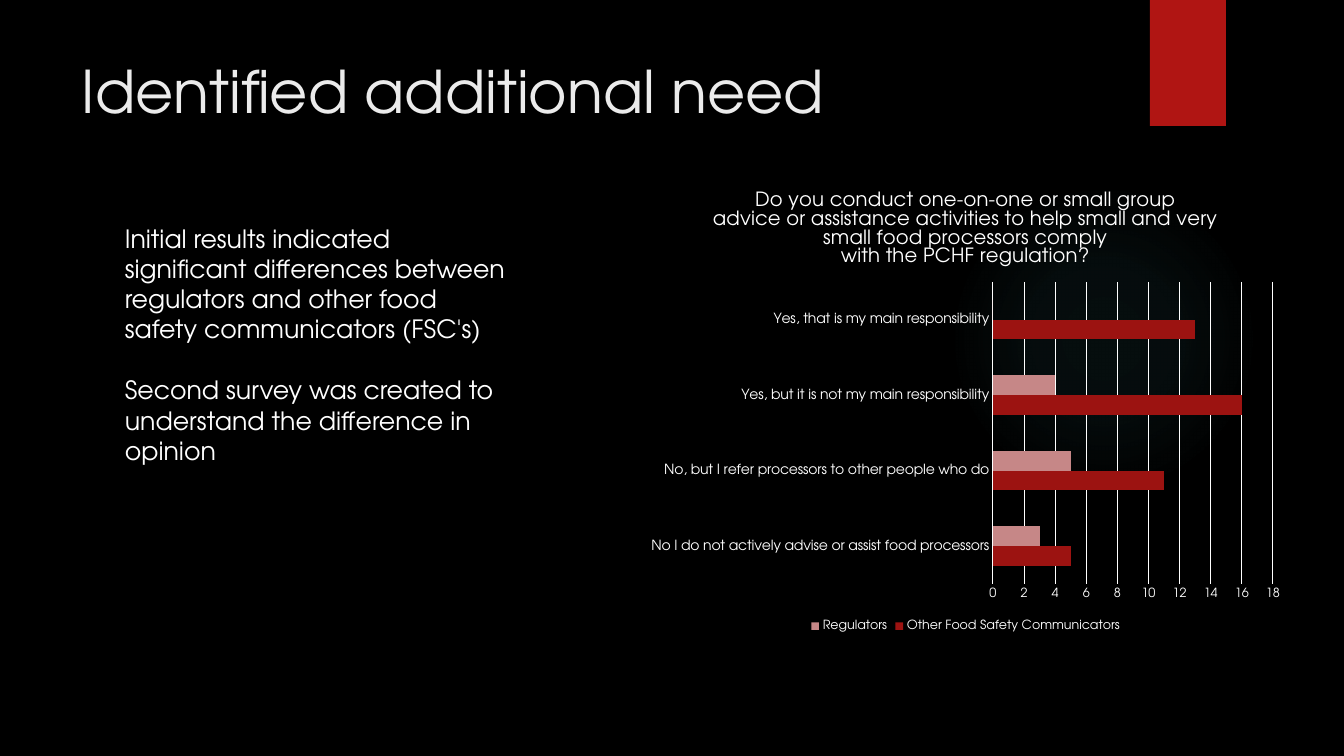
from lxml.etree import SubElement
from pptx import Presentation
from pptx.chart.data import CategoryChartData
from pptx.dml.color import RGBColor
from pptx.enum.chart import XL_CHART_TYPE, XL_LEGEND_POSITION, XL_TICK_MARK
from pptx.enum.shapes import MSO_SHAPE
from pptx.oxml import parse_xml
from pptx.oxml.ns import nsdecls, qn
from pptx.util import Pt

SCALE = 12192000 / 1344
FONT = "TeX Gyre Adventor"
COLORS = {
    "back": "000000", "glow": "50B9C1", "tab": "B01513", "title": "EBEBEB",
    "text": "FFFFFF", "other": "9C1311", "rule": "C68787",
}
CATS = [
    "No I do not actively advise or assist food processors",
    "No, but I refer processors to other people who do",
    "Yes, but it is not my main responsibility",
    "Yes, that is my main responsibility",
]
SERIES = [
    ("Other Food Safety Communicators", (5, 11, 16, 13), "other"),
    ("Regulators", (3, 5, 4, 0), "rule"),
]
ASKED = [
    "Do you conduct one-on-one or small group",
    "advice or assistance activities to help small and very small food processors comply",
    "with the PCHF regulation?",
]
BODY = [
    "Initial results indicated significant differences between regulators "
    "and other food safety communicators (FSC's)",
    "Second survey was created to understand the difference in opinion",
]


def px(*vals):
    """Turn pixel lengths into EMU."""
    return [round(val * SCALE) for val in vals]


def tint(name):
    """Return the named colour."""
    return RGBColor.from_string(COLORS[name])


def style(font, size, color="text"):
    """Set face, size and colour of a font."""
    font.name, font.size, font.bold = FONT, Pt(size), False
    font.color.rgb = tint(color)


def write(frame, lines, size, color="text", gap=0):
    """Fill a text frame with one paragraph per line."""
    frame.text = "\n".join(lines)
    for num, para in enumerate(frame.paragraphs):
        if num and gap:
            para.space_before = Pt(gap)
        for run in para.runs:
            style(run.font, size, color)


def add_text(slide, box, lines, size, color="text", gap=0):
    """Add a wrapping text box."""
    frame = slide.shapes.add_textbox(*px(*box)).text_frame
    frame.word_wrap = True
    write(frame, lines, size, color, gap)


def add_block(slide, kind, box, color):
    """Add a plain filled shape."""
    shape = slide.shapes.add_shape(kind, *px(*box))
    shape.shadow.inherit = False
    shape.fill.solid()
    shape.fill.fore_color.rgb = tint(color)
    shape.line.fill.background()
    return shape


def add_glow(slide, box):
    """Add a disc that fades out from its centre."""
    shape = add_block(slide, MSO_SHAPE.OVAL, box, "glow")
    stops = "".join(
        f'<a:gs pos="{pos}000"><a:srgbClr val="{COLORS["glow"]}">'
        f'<a:alpha val="{part}000"/></a:srgbClr></a:gs>'
        for pos, part in ((0, 7), (36, 6), (69, 0), (100, 0))
    )
    grad = parse_xml(
        f'<a:gradFill {nsdecls("a")}><a:gsLst>{stops}</a:gsLst><a:path path="circle">'
        '<a:fillToRect l="50000" t="50000" r="50000" b="50000"/></a:path></a:gradFill>'
    )
    props = shape.element.spPr
    props.replace(props.find(qn("a:solidFill")), grad)


def place_plot(chart, box, plot):
    """Fix the inner plot area, given in slide pixels."""
    area = chart.plots[0]._element.getparent()
    old = area.find(qn("c:layout"))
    if old is not None:
        area.remove(old)
    layout = parse_xml(f'<c:layout {nsdecls("c")}><c:manualLayout/></c:layout>')
    area.insert(0, layout)
    left, top, wide, high = box
    x, y, w, h = plot
    parts = [
        ("layoutTarget", "inner"), ("xMode", "edge"), ("yMode", "edge"),
        ("x", (x - left) / wide), ("y", (y - top) / high),
        ("w", w / wide), ("h", h / high),
    ]
    for tag, val in parts:
        SubElement(layout[0], qn("c:" + tag)).set("val", str(val))


def set_line(line):
    """Draw a thin white line."""
    line.color.rgb = tint("text")
    line.width = Pt(0.75)


def add_bars(slide, box, plot):
    """Add the clustered bar chart of survey answers."""
    data = CategoryChartData()
    data.categories = CATS
    for name, vals, _ in SERIES:
        data.add_series(name, vals)
    kind = XL_CHART_TYPE.BAR_CLUSTERED
    chart = slide.shapes.add_chart(kind, *px(*box), data).chart
    style(chart.font, 10)
    chart.has_title = True
    write(chart.chart_title.text_frame, ASKED, 14)
    chart.chart_title.include_in_layout = False
    chart.has_legend = True
    chart.legend.position = XL_LEGEND_POSITION.BOTTOM
    chart.legend.include_in_layout = False
    style(chart.legend.font, 9)
    bars = chart.plots[0]
    bars.gap_width, bars.overlap, bars.vary_by_categories = 182, 0, False
    for item, (_, _, color) in zip(bars.series, SERIES):
        item.format.fill.solid()
        item.format.fill.fore_color.rgb = tint(color)
    for axis, size in ((chart.category_axis, 10), (chart.value_axis, 9)):
        axis.major_tick_mark = axis.minor_tick_mark = XL_TICK_MARK.NONE
        style(axis.tick_labels.font, size)
    set_line(chart.category_axis.format.line)
    value = chart.value_axis
    value.format.line.fill.background()
    value.minimum_scale, value.maximum_scale, value.major_unit = 0, 18, 2
    value.has_major_gridlines = True
    set_line(value.major_gridlines.format.line)
    place_plot(chart, box, plot)


def main():
    """Build the slide and save it."""
    deck = Presentation()
    deck.slide_width, deck.slide_height = px(1344, 756)
    slide = deck.slides.add_slide(deck.slide_layouts[6])
    slide.background.fill.solid()
    slide.background.fill.fore_color.rgb = tint("back")
    add_glow(slide, (949, 184, 310, 310))
    add_block(slide, MSO_SHAPE.RECTANGLE, (1150, 0, 76, 126), "tab")
    add_text(slide, (72, 50, 1037, 154), ["Identified additional need"], 42, "title")
    add_bars(slide, (638, 172, 655, 464), (993, 282, 280, 302))
    add_text(slide, (115, 218, 407, 224), BODY, 18, gap=22)
    deck.save("out.pptx")


if __name__ == "__main__":
    main()
